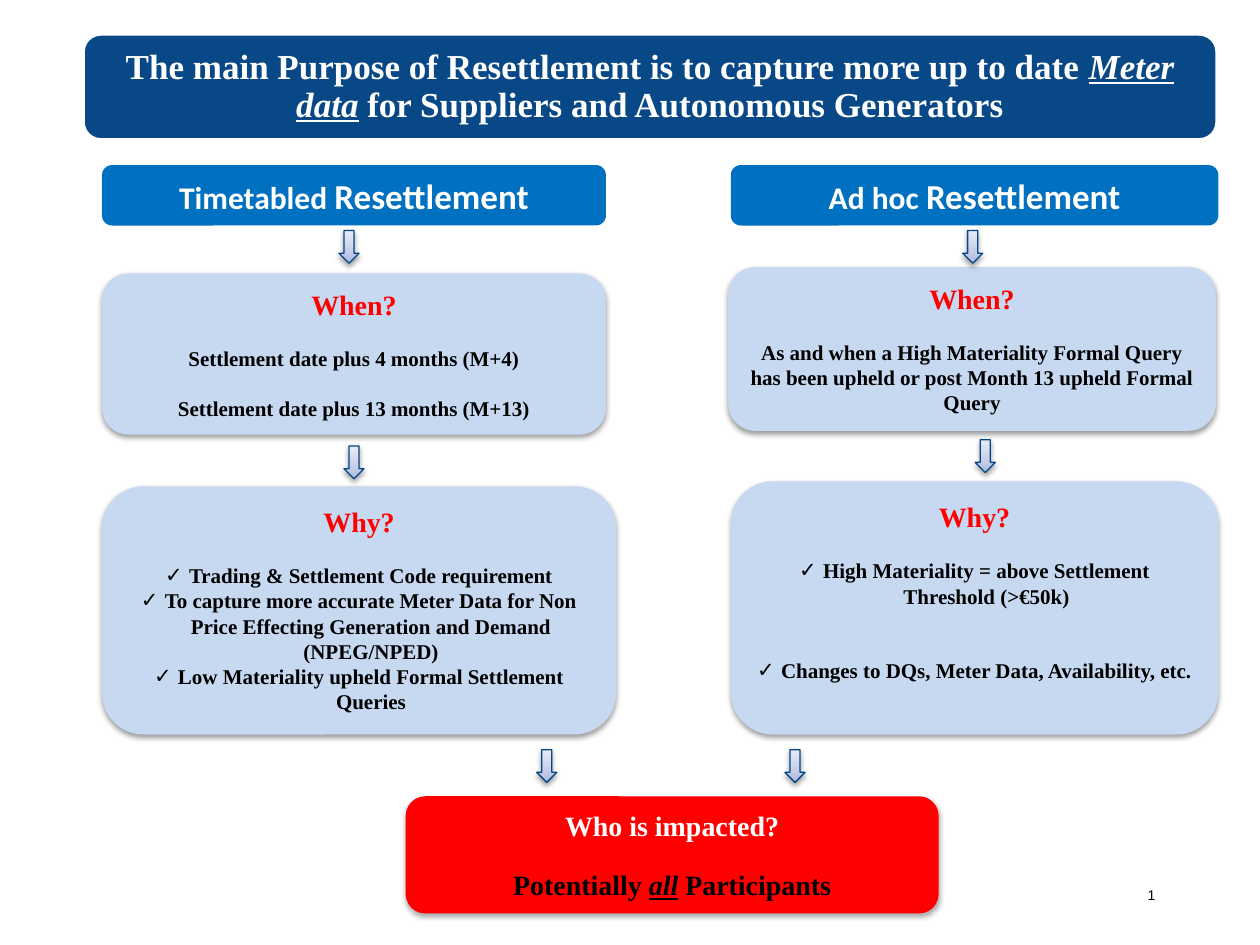
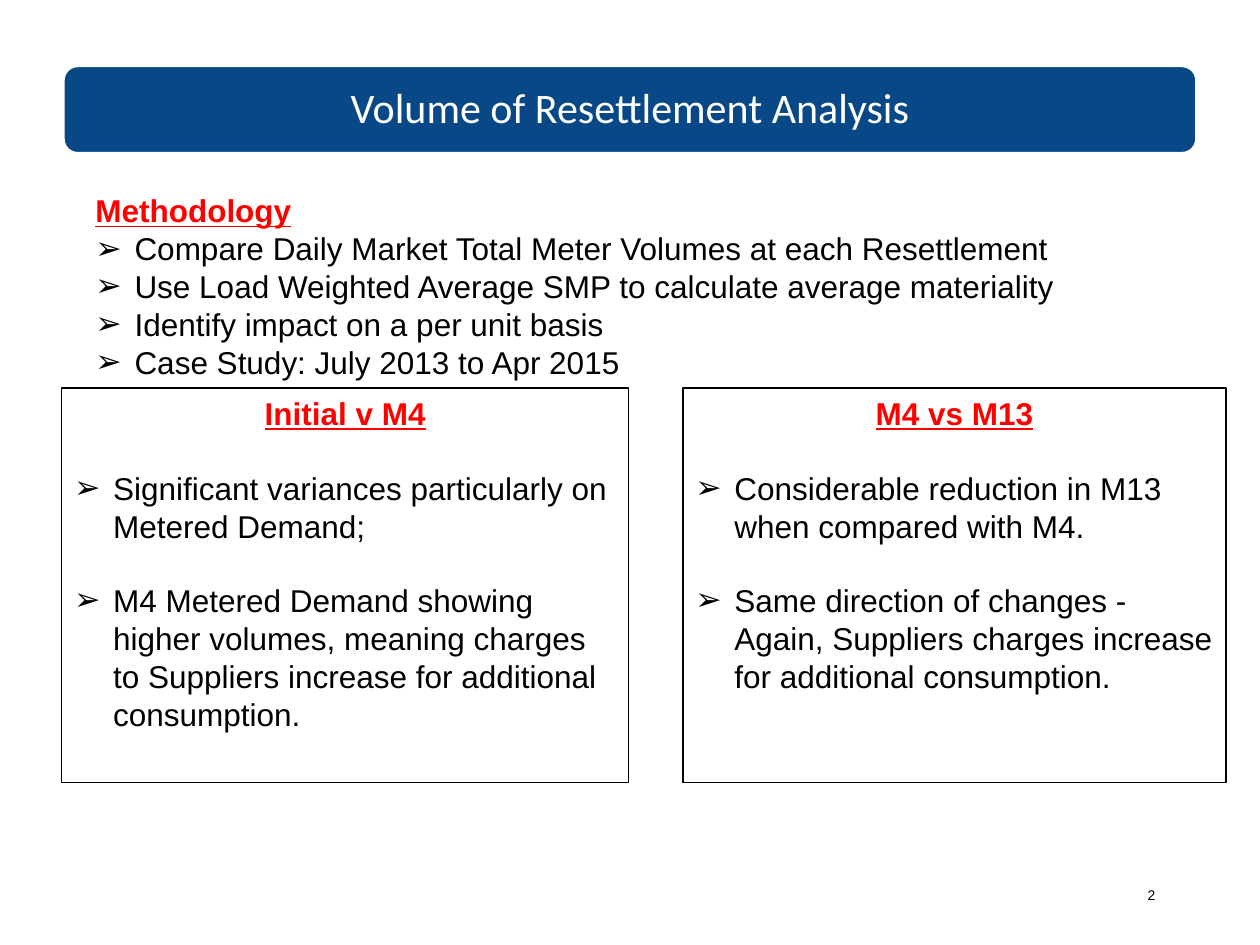
from copy import deepcopy
from dataclasses import dataclass, replace

from lxml import etree
from pptx import Presentation
from pptx.dml.color import RGBColor
from pptx.enum.shapes import MSO_SHAPE
from pptx.enum.text import MSO_ANCHOR, PP_ALIGN
from pptx.oxml.ns import qn
from pptx.util import Inches, Pt

ROUNDED, RECTANGLE, DOWN_ARROW = (
    MSO_SHAPE.ROUNDED_RECTANGLE, MSO_SHAPE.RECTANGLE, MSO_SHAPE.DOWN_ARROW)
LEFT, CENTER, RIGHT = PP_ALIGN.LEFT, PP_ALIGN.CENTER, PP_ALIGN.RIGHT
TOP, MIDDLE = MSO_ANCHOR.TOP, MSO_ANCHOR.MIDDLE


@dataclass(frozen=True)
class Theme:
    navy: str = "084887"
    blue: str = "0070C0"
    pale: str = "C6D9F1"
    red: str = "FF0000"
    white: str = "FFFFFF"
    black: str = "000000"
    arrow_line: str = "054687"
    arrow_stops: tuple = ((0, "ABB8E0"), (0.35, "C5CDE8"), (1, "E8ECF7"))
    serif: str = "Times New Roman"
    sans: str = "Arial"
    display: str = "Calibri"
    number_size: int = 8
    detail_size: int = 12
    question_size: int = 16
    body_size: int = 18
    heading_size: int = 20
    title_size: int = 24


@dataclass(frozen=True)
class Span:
    text: str
    size: int
    font: str
    color: str
    bold: bool = False
    italic: bool = False
    underline: bool = False


@dataclass(frozen=True)
class Para:
    spans: tuple
    align: int = CENTER
    before: float = 0
    bullet: str = ""
    indent: float = 0
    line_spacing: float = 1


THEME = Theme()


def serif(text, size=THEME.detail_size, color=THEME.black, **flags):
    return Span(text, size, THEME.serif, color, bold=True, **flags)


def question(text, color=THEME.red):
    return Para((serif(text, THEME.question_size, color),))


def check(text, before=0):
    return Para((serif(text),), CENTER, before, "✓", 0.19)


def sans_heading(text, align=CENTER):
    span = Span(text, THEME.body_size, THEME.sans, THEME.red, True, False, True)
    return Para((span,), align)


def arrow_point(text, before=0):
    span = Span(text, THEME.body_size, THEME.sans, THEME.black)
    return Para((span,), LEFT, before, "➢", 0.31)


class PageBuilder:
    """Holds the theme and the current page."""

    def __init__(self, deck, theme):
        self.deck, self.theme, self.page = deck, theme, None

    def new_page(self):
        self.page = self.deck.slides.add_slide(self.deck.slide_layouts[6])
        number = Span(str(len(self.deck.slides)), self.theme.number_size,
                      self.theme.sans, self.theme.black)
        self.text((8.81, 6.99, 0.46, 0.24), [Para((number,), RIGHT)])

    def fill_text(self, frame, paras, anchor=TOP):
        frame.word_wrap = True
        frame.vertical_anchor = anchor
        for index, para in enumerate(paras):
            paragraph = frame.paragraphs[0] if index == 0 else frame.add_paragraph()
            if para.bullet:
                self.bullet(paragraph, para)
            paragraph.alignment = para.align
            paragraph.space_before = Pt(para.before)
            paragraph.line_spacing = para.line_spacing
            for span in para.spans:
                run = paragraph.add_run()
                run.text = span.text
                font = run.font
                font.size, font.name = Pt(span.size), span.font
                font.bold, font.italic = span.bold, span.italic
                font.underline = span.underline
                font.color.rgb = RGBColor.from_string(span.color)

    def bullet(self, paragraph, para):
        properties = paragraph._p.get_or_add_pPr()
        properties.set("marL", str(Inches(para.indent)))
        properties.set("indent", str(-Inches(para.indent)))
        etree.SubElement(properties, qn("a:buFont"), typeface=self.theme.sans)
        etree.SubElement(properties, qn("a:buChar"), char=para.bullet)

    def text(self, place, paras):
        box = self.page.shapes.add_textbox(*map(Inches, place))
        self.fill_text(box.text_frame, paras)

    def shape(self, kind, place, fill=None, line=None, width=0.75):
        shape = self.page.shapes.add_shape(kind, *map(Inches, place))
        shape.shadow.inherit = False
        if fill:
            shape.fill.solid()
            shape.fill.fore_color.rgb = RGBColor.from_string(fill)
        else:
            shape.fill.background()
        if line:
            shape.line.color.rgb = RGBColor.from_string(line)
            shape.line.width = Pt(width)
        else:
            shape.line.fill.background()
        return shape

    def drop_shadow(self, shape, opacity=38, distance=1.6):
        effects = shape._element.spPr.find(qn("a:effectLst"))
        shadow = etree.SubElement(
            effects, qn("a:outerShdw"), blurRad=str(Pt(3.1)),
            dist=str(Pt(distance)), dir="5400000", rotWithShape="0")
        color = etree.SubElement(shadow, qn("a:srgbClr"), val=self.theme.black)
        etree.SubElement(color, qn("a:alpha"), val=str(opacity * 1000))

    def title(self, place, spans):
        band = self.shape(ROUNDED, place, self.theme.navy, self.theme.white, 2)
        frame = band.text_frame
        frame.margin_left = frame.margin_right = Inches(0.04)
        self.fill_text(frame, [Para(spans, line_spacing=0.9)], MIDDLE)

    def heading(self, place, lead, topic):
        span = Span(lead, self.theme.body_size, self.theme.display,
                    self.theme.white, bold=True)
        box = self.shape(ROUNDED, place, self.theme.blue)
        larger = replace(span, text=topic, size=self.theme.heading_size)
        self.fill_text(box.text_frame, [Para((span, larger))])

    def card(self, place, paras, fill=THEME.pale, **shadow):
        box = self.shape(ROUNDED, place, fill)
        self.drop_shadow(box, **shadow)
        self.fill_text(box.text_frame, paras)

    def framed_list(self, place, paras):
        box = self.shape(RECTANGLE, place, line=self.theme.black)
        self.fill_text(box.text_frame, paras)

    def arrow(self, left, top):
        arrow = self.shape(DOWN_ARROW, (left, top, 0.16, 0.26),
                           line=self.theme.arrow_line)
        arrow.fill.gradient()
        arrow.fill.gradient_angle = 90
        stop_list = arrow._element.spPr.find(".//" + qn("a:gsLst"))
        stop_list.append(deepcopy(stop_list[-1]))
        for stop, (position, color) in zip(arrow.fill.gradient_stops,
                                           self.theme.arrow_stops):
            stop.position = position
            stop.color.rgb = RGBColor.from_string(color)
        self.drop_shadow(arrow)


def build_purpose(builder):
    theme = builder.theme
    builder.new_page()
    plain = serif("The main Purpose of Resettlement is to capture more up to date ",
                  theme.heading_size, theme.white)
    builder.title((0.66, 0.27, 9, 0.84), (
        plain,
        replace(plain, text="Meter", italic=True, underline=True),
        replace(plain, text=" ", underline=True),
        replace(plain, text="data", italic=True, underline=True),
        replace(plain, text=" for Suppliers and Autonomous Generators")))

    builder.heading((0.81, 1.31, 4, 0.48), "Timetabled ", "Resettlement")
    builder.heading((5.8, 1.31, 3.87, 0.48), "Ad hoc ", "Resettlement")

    gap = 14
    builder.card((0.81, 2.17, 4, 1.28), [
        question("When?"),
        Para((serif("Settlement date plus 4 months (M+4)"),), before=gap),
        Para((serif("Settlement date plus 13 months (M+13)"),), before=gap)])
    builder.card((0.81, 3.86, 4.08, 1.97), [
        question("Why?"),
        check("Trading & Settlement Code requirement", gap),
        check("To capture more accurate Meter Data for Non Price Effecting "
              "Generation and Demand (NPEG/NPED)"),
        check("Low Materiality upheld Formal Settlement Queries")])
    builder.card((5.78, 2.12, 3.87, 1.3), [
        question("When?"),
        Para((serif("As and when a High Materiality Formal Query has been upheld "
                    "or post Month 13 upheld Formal Query"),), before=gap)])
    builder.card((5.8, 3.82, 3.87, 2.01), [
        question("Why?"),
        check("High Materiality = above Settlement Threshold (>€50k)", gap),
        check("Changes to DQs, Meter Data, Availability, etc.", 2 * gap)])

    answer = serif("Potentially ", theme.question_size)
    builder.card((3.22, 6.32, 4.23, 0.93), [
        question("Who is impacted?", theme.white),
        Para((answer,
              replace(answer, text="all", italic=True, underline=True),
              replace(answer, text=" Participants")), before=15),
    ], theme.red, opacity=35, distance=1.8)

    for left, top in ((2.69, 1.83), (7.64, 1.83), (2.73, 3.54),
                      (7.74, 3.49), (4.26, 5.95), (6.23, 5.95)):
        builder.arrow(left, top)


def build_volume_analysis(builder):
    theme = builder.theme
    builder.new_page()
    builder.title((0.5, 0.52, 9, 0.7), (
        Span("Volume of Resettlement Analysis", theme.title_size,
             theme.display, theme.white),))
    builder.text((0.66, 1.47, 8.64, 1.62), [
        sans_heading("Methodology", LEFT),
        arrow_point("Compare Daily Market Total Meter Volumes at each Resettlement"),
        arrow_point("Use Load Weighted Average SMP to calculate average materiality"),
        arrow_point("Identify impact on a per unit basis"),
        arrow_point("Case Study: July 2013 to Apr 2015")])

    comparisons = (
        (0.49, 4.5, "Initial v M4", (
            "Significant variances particularly on Metered Demand;",
            "M4 Metered Demand showing higher volumes, meaning charges to "
            "Suppliers increase for additional consumption.")),
        (5.42, 4.31, "M4 vs M13", (
            "Considerable reduction in M13 when compared with M4.",
            "Same direction of changes - Again, Suppliers charges increase "
            "for additional consumption.")))
    for left, width, heading, findings in comparisons:
        builder.framed_list((left, 3.08, width, 3.13), [
            sans_heading(heading),
            *(arrow_point(finding, before=21) for finding in findings)])


def main():
    deck = Presentation()
    deck.slide_width, deck.slide_height = Inches(10), Inches(7.5)
    builder = PageBuilder(deck, THEME)
    build_purpose(builder)
    build_volume_analysis(builder)
    deck.save("out.pptx")


if __name__ == "__main__":
    main()
